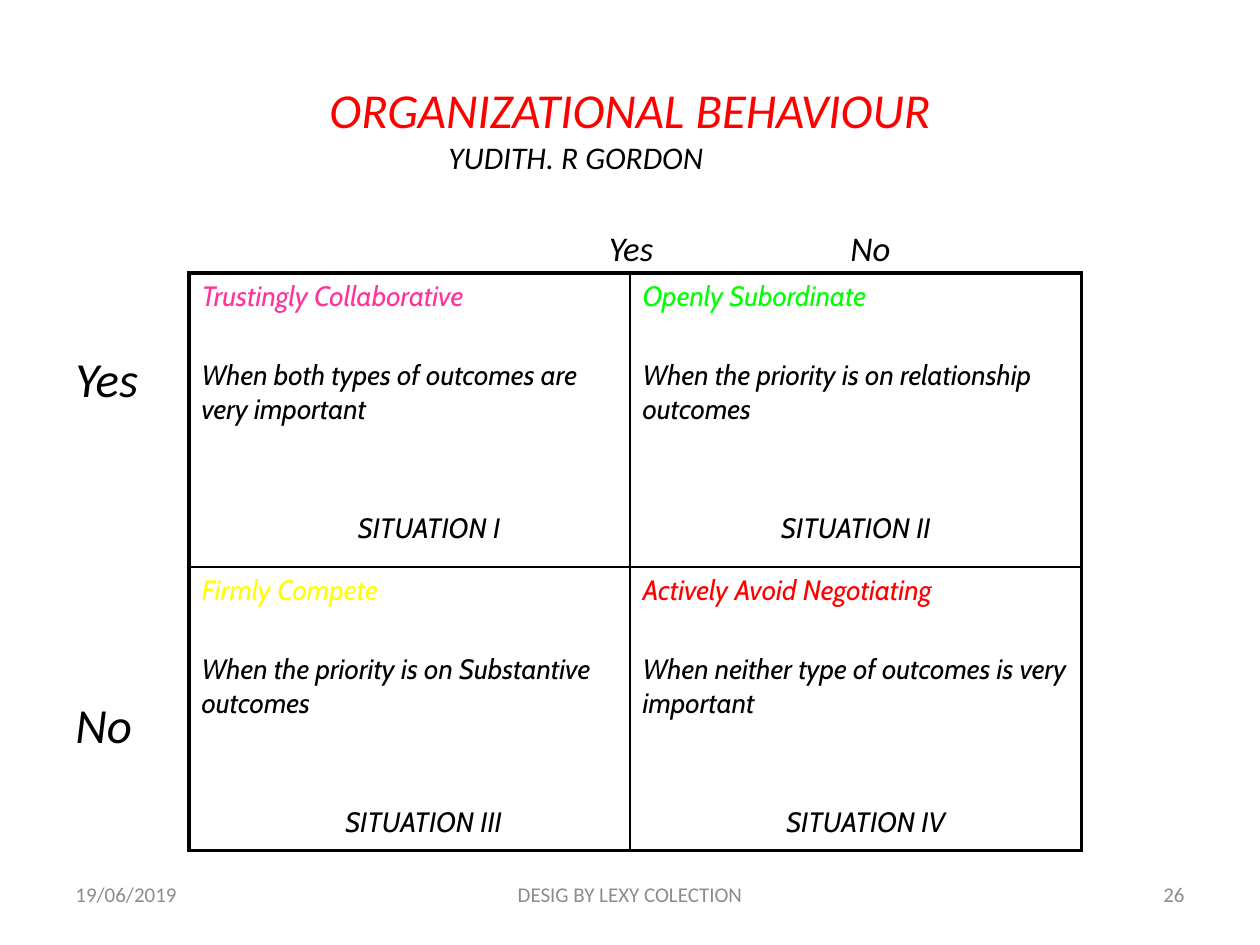
from lxml.etree import SubElement
from pptx import Presentation
from pptx.dml.color import RGBColor
from pptx.enum.text import MSO_ANCHOR as Anchor, PP_ALIGN as Align
from pptx.oxml.ns import qn
from pptx.util import Inches, Pt

COLS, ROWS = 120, 90
COLORS = {"black": "000000", "red": "FF0000", "pink": "FF3399",
          "green": "00FF00", "yellow": "FFFF00", "grey": "8C8C8C"}
THICK, THIN = 2.25, 1

COL_WIDTHS, ROW_HEIGHTS = (42, 43), (28, 27)
# heading, colour, description, situation, indent of the situation in inches
SITUATIONS = [
    [("Trustingly Collaborative", "pink",
      "When both types of outcomes are very important", "SITUATION I", 1.24),
     ("Openly Subordinate", "green",
      "When the priority is on relationship outcomes", "SITUATION II", 1.1)],
    [("Firmly Compete", "yellow",
      "When the priority is on Substantive outcomes", "SITUATION III", 1.14),
     ("Actively Avoid Negotiating", "red",
      "When neither type of outcomes is very important", "SITUATION IV", 1.14)],
]
# text, column, row, width, height, size
AXIS_LABELS = [("Yes", 56.8, 21.1, 12, 5, 19.8), ("No", 79.8, 21.1, 12, 5, 19.8),
               ("Yes", 6, 33, 12, 6, 28), ("No", 6, 65.9, 12, 6, 28)]
FOOTER = [("19/06/2019", 6, 28, Align.LEFT),
          ("DESIG BY LEXY COLECTION", 41, 38, Align.CENTER),
          ("26", 86, 28, Align.RIGHT)]


class Deck:
    def __init__(self, prs):
        self.prs = prs
        self.slide = prs.slides.add_slide(prs.slide_layouts[6])

    def x(self, cols):
        return round(self.prs.slide_width * cols / COLS)

    def y(self, rows):
        return round(self.prs.slide_height * rows / ROWS)

    def area(self, col, row, width, height):
        return self.x(col), self.y(row), self.x(width), self.y(height)

    def paragraph(self, tf, text, first=False, size=16, font="Calibri", color="black",
                  italic=True, indent=0, right=0, **formats):
        p = tf.paragraphs[0] if first else tf.add_paragraph()
        for name, value in formats.items():
            setattr(p, name, value)
        for name, value in (("marL", indent), ("marR", right)):
            if value:
                p._p.get_or_add_pPr().set(name, str(Inches(value)))
        r = p.add_run()
        r.text = text
        for name, value in {"size": Pt(size), "name": font, "italic": italic}.items():
            setattr(r.font, name, value)
        r.font.color.rgb = RGBColor.from_string(COLORS[color])

    def text(self, area, *paragraphs, anchor=Anchor.MIDDLE):
        """Add a text box; each paragraph is a dict of text and formats."""
        tf = self.slide.shapes.add_textbox(*self.area(*area)).text_frame
        tf.word_wrap = True
        tf.vertical_anchor = anchor
        for i, formats in enumerate(paragraphs):
            self.paragraph(tf, first=i == 0, **formats)

    def borders(self, cell, widths):
        tc_pr = cell._tc.get_or_add_tcPr()
        for side, width in widths.items():
            ln = SubElement(tc_pr, qn(f"a:ln{side}"), w=str(Pt(width)))
            fill = SubElement(ln, qn("a:solidFill"))
            SubElement(fill, qn("a:srgbClr"), val=COLORS["black"])

    def table(self, col, row, widths, heights, cells):
        area = self.area(col, row, sum(widths), sum(heights))
        table = self.slide.shapes.add_table(len(heights), len(widths), *area).table
        table.first_row = table.horz_banding = False
        for column, width in zip(table.columns, widths):
            column.width = self.x(width)
        for line, height in zip(table.rows, heights):
            line.height = self.y(height)
        last_row, last_col = len(heights) - 1, len(widths) - 1
        for i, line in enumerate(cells):
            for j, content in enumerate(line):
                cell = table.cell(i, j)
                self.borders(cell, {"L": THIN if j else THICK,
                                    "R": THICK if j == last_col else THIN,
                                    "T": THIN if i else THICK,
                                    "B": THICK if i == last_row else THIN})
                cell.fill.background()
                self.situation(cell.text_frame, *content)

    def situation(self, tf, heading, color, description, name, indent):
        self.paragraph(tf, heading, first=True, font="Cabin", color=color)
        self.paragraph(tf, description, font="Cabin", space_before=Pt(26))
        self.paragraph(tf, name, font="Cabin", space_before=Pt(49), indent=indent)


def main():
    prs = Presentation()
    prs.slide_width, prs.slide_height = Inches(10), Inches(7.5)
    deck = Deck(prs)
    deck.text((6, 7, 108, 10),
              dict(text="ORGANIZATIONAL BEHAVIOUR", size=27.9, color="red",
                   alignment=Align.CENTER),
              dict(text="YUDITH. R GORDON", size=18, alignment=Align.CENTER, right=0.86),
              anchor=Anchor.TOP)
    for text, *area, size in AXIS_LABELS:
        deck.text(area, dict(text=text, size=size))
    deck.table(18, 26, COL_WIDTHS, ROW_HEIGHTS, SITUATIONS)
    for text, col, width, align in FOOTER:
        deck.text((col, 82, width, 6.25),
                  dict(text=text, size=12, color="grey", italic=False, alignment=align))
    prs.save("out.pptx")


if __name__ == "__main__":
    main()
